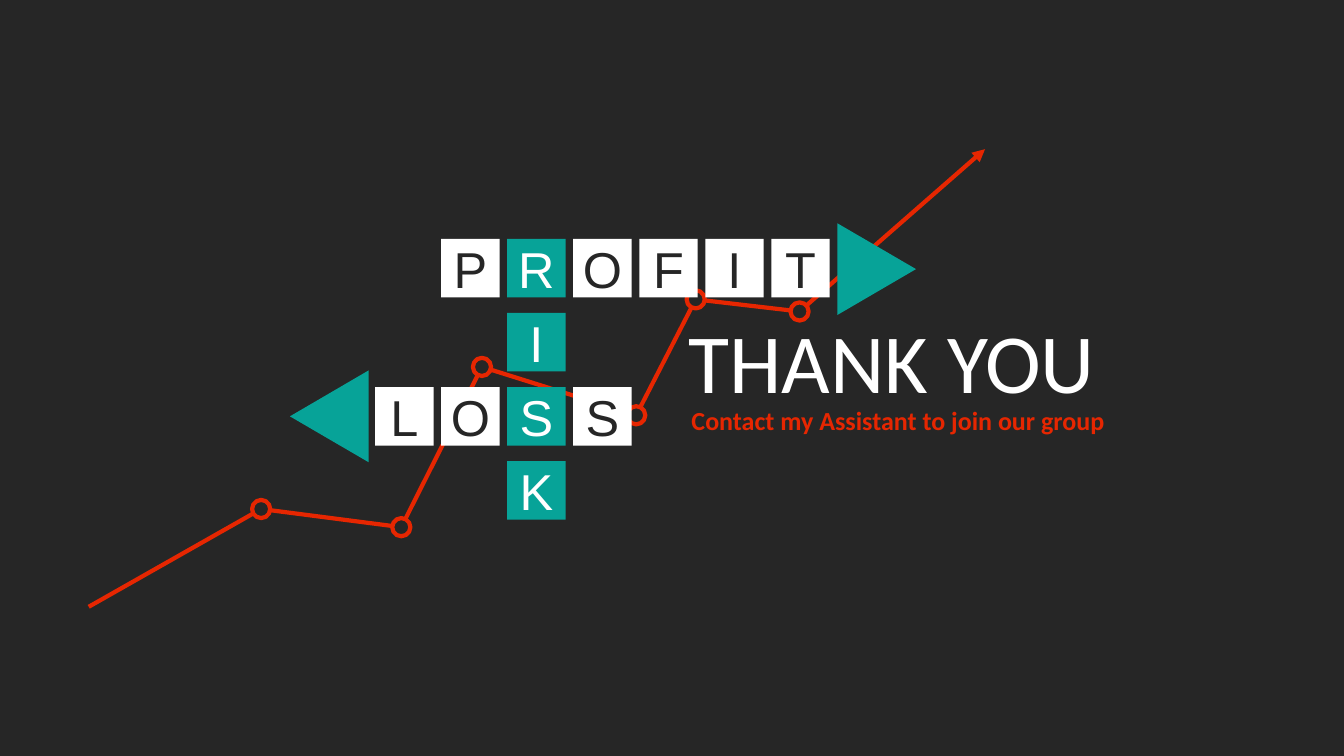
from itertools import pairwise
from math import hypot

from lxml import etree
from pptx import Presentation
from pptx.dml.color import RGBColor
from pptx.enum import shapes, text
from pptx.oxml.ns import qn
from pptx.util import Inches, Pt

DARK = RGBColor(0x26, 0x26, 0x26)
WHITE = RGBColor(0xFF, 0xFF, 0xFF)
TEAL = RGBColor(0x07, 0xA3, 0x98)
RED = RGBColor(0xE6, 0x26, 0x01)

# Trend line, in inches
START, END = (0.88, 6.02), (9.77, 1.48)
RINGS = [(2.59, 5.05), (3.98, 5.23), (4.78, 3.64), (6.31, 4.12), (6.9, 2.97), (7.93, 3.09)]
RING_RADIUS = 0.09

# Crossword: word, first column, first row
ACROSS = [("PROFIT", 1, 0), ("LOSS", 0, 2)]
DOWN = ("RISK", 2, 0)
GRID_LEFT, GRID_TOP = 3.72, 2.37
COLUMN_STEP, ROW_STEP, TILE = 0.655, 0.735, 0.58
LETTER_FORMAT = {"name": "Arial", "size": Pt(36)}

# Triangles: left, top, rotation
POINTERS = [(8.24, 2.28, 90), (2.81, 3.74, 270)]
POINTER_WIDTH, POINTER_HEIGHT = 0.91, 0.78

# Texts: wording, box, font format, colour
TEXTS = [
    ("THANK YOU", (6.73, 3.02, 5.22, 1.11),
     {"name": "Calibri", "size": Pt(60), "bold": False}, WHITE),
    ("Contact my Assistant to join our group", (6.76, 3.96, 5.22, 0.41),
     {"name": "Calibri", "size": Pt(18.6), "bold": True}, RED),
]


def set_font(paragraph, font_format, color):
    for name, value in font_format.items():
        setattr(paragraph.font, name, value)
    paragraph.font.color.rgb = color


def add_plain_shape(slide, kind, box, fill=None, line=None):
    shape = slide.shapes.add_shape(kind, *map(Inches, box))
    shape.shadow.inherit = False
    if fill is None:
        shape.fill.background()
    else:
        shape.fill.solid()
        shape.fill.fore_color.rgb = fill
    if line is None:
        shape.line.fill.background()
    else:
        shape.line.color.rgb = line
        shape.line.width = Pt(3)
    return shape


def step_toward(point, target, distance):
    dx, dy = target[0] - point[0], target[1] - point[1]
    share = distance / hypot(dx, dy)
    return point[0] + dx * share, point[1] + dy * share


def add_trend(slide):
    for x, y in RINGS:
        box = (x - RING_RADIUS, y - RING_RADIUS, 2 * RING_RADIUS, 2 * RING_RADIUS)
        add_plain_shape(slide, shapes.MSO_SHAPE.OVAL, box, line=RED)
    for first, second in pairwise([START, *RINGS, END]):
        begin = step_toward(first, second, RING_RADIUS) if first != START else first
        end = step_toward(second, first, RING_RADIUS) if second != END else second
        connector = slide.shapes.add_connector(
            shapes.MSO_CONNECTOR.STRAIGHT, *map(Inches, (*begin, *end)))
        connector.line.color.rgb = RED
        connector.line.width = Pt(3)
        properties = connector._element.spPr
        etree.SubElement(properties, qn("a:effectLst"))
        if second == END:
            etree.SubElement(properties.find(qn("a:ln")), qn("a:tailEnd"), type="triangle")


def add_texts(slide):
    for wording, box, font_format, color in TEXTS:
        frame = slide.shapes.add_textbox(*map(Inches, box)).text_frame
        frame.word_wrap = True
        frame.auto_size = text.MSO_AUTO_SIZE.SHAPE_TO_FIT_TEXT
        frame.vertical_anchor = text.MSO_ANCHOR.MIDDLE
        paragraph = frame.paragraphs[0]
        paragraph.text = wording
        set_font(paragraph, font_format, color)


def add_crossword(slide):
    tiles = {(column + i, row): (letter, WHITE, DARK)
             for word, column, row in ACROSS for i, letter in enumerate(word)}
    word, column, row = DOWN
    tiles.update({(column, row + i): (letter, TEAL, WHITE) for i, letter in enumerate(word)})

    for (column, row), (letter, fill, color) in tiles.items():
        box = (GRID_LEFT + column * COLUMN_STEP, GRID_TOP + row * ROW_STEP, TILE, TILE)
        tile = add_plain_shape(slide, shapes.MSO_SHAPE.RECTANGLE, box, fill)
        frame = tile.text_frame
        frame.margin_left = frame.margin_right = 0
        frame.vertical_anchor = text.MSO_ANCHOR.MIDDLE
        paragraph = frame.paragraphs[0]
        paragraph.text = letter
        paragraph.alignment = text.PP_ALIGN.CENTER
        set_font(paragraph, LETTER_FORMAT, color)

    for left, top, rotation in POINTERS:
        box = (left, top, POINTER_WIDTH, POINTER_HEIGHT)
        pointer = add_plain_shape(slide, shapes.MSO_SHAPE.ISOSCELES_TRIANGLE, box, TEAL)
        pointer.rotation = rotation


def main():
    presentation = Presentation()
    presentation.slide_width, presentation.slide_height = Inches(13.33), Inches(7.5)
    slide = presentation.slides.add_slide(presentation.slide_layouts[6])
    slide.background.fill.solid()
    slide.background.fill.fore_color.rgb = DARK
    add_trend(slide)
    add_texts(slide)
    add_crossword(slide)
    presentation.save("out.pptx")


if __name__ == "__main__":
    main()
